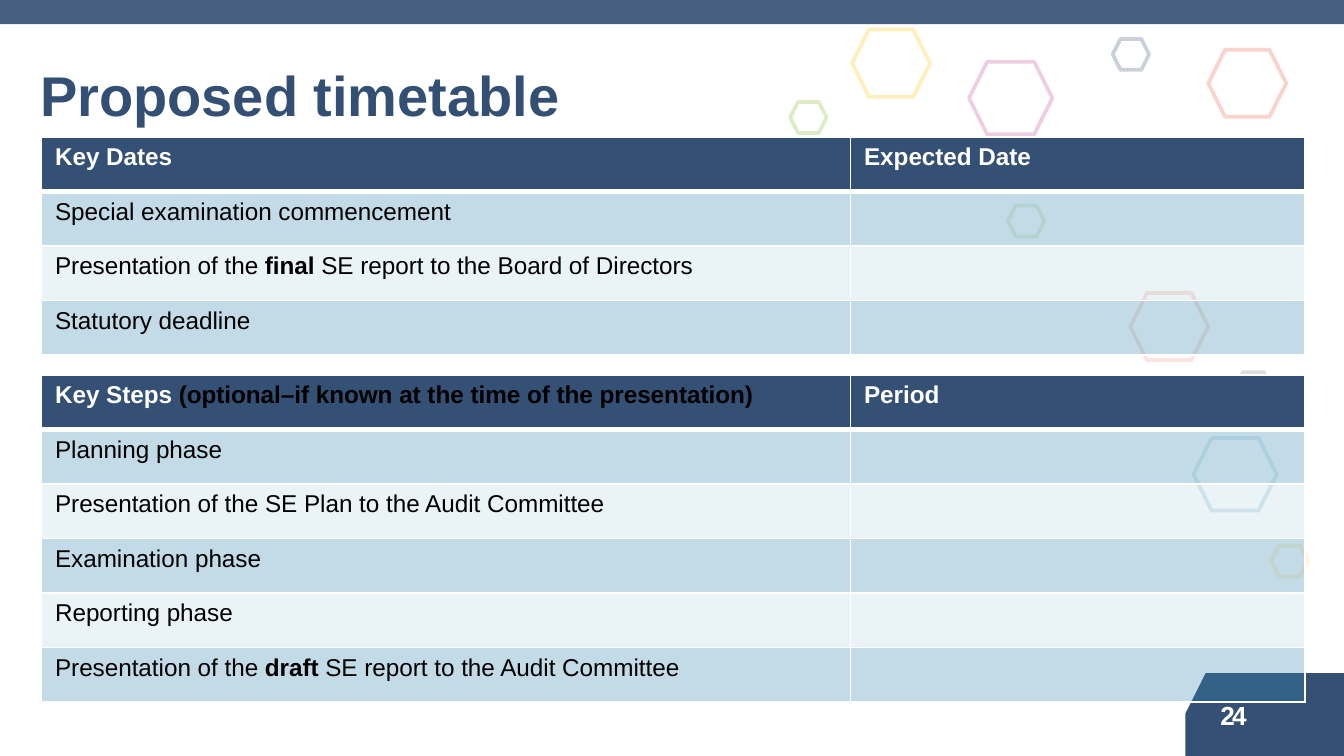
from dataclasses import dataclass

from lxml.etree import SubElement
from pptx import Presentation
from pptx.dml.color import RGBColor
from pptx.enum.shapes import MSO_SHAPE as Shape
from pptx.enum.text import MSO_ANCHOR as Anchor, MSO_AUTO_SIZE as AutoSize, PP_ALIGN as Align
from pptx.oxml import parse_xml
from pptx.oxml.ns import nsdecls, qn
from pptx.util import Inches, Pt


@dataclass(frozen=True)
class Theme:
    font: str = "Arial"
    title: str = "334F74"
    navy: str = "345075"
    blue: str = "368AAF"
    pink: str = "BC4493"
    yellow: str = "FFC400"
    ink: str = "1D2042"
    green: str = "7DB229"
    red: str = "EC563C"
    white: str = "FFFFFF"
    black: str = "000000"
    title_size: int = 30
    number_size: int = 14
    table_size: int = 13


def apply(target, values):
    for name, value in values.items():
        setattr(target, name, value)


def fade(element, percent):
    for color in element.iter(qn("a:srgbClr")):
        SubElement(color, qn("a:alpha")).set("val", str(percent * 1000))


class SlideBuilder:
    COLUMNS, ROWS = 100, 56.25

    def __init__(self, presentation, theme):
        self.theme = theme
        self.column = presentation.slide_width / self.COLUMNS
        self.row = presentation.slide_height / self.ROWS
        self.slide = presentation.slides.add_slide(presentation.slide_layouts[5])
        self.shapes = self.slide.shapes

    def box(self, left, top, width, height):
        return (round(left * self.column), round(top * self.row),
                round(width * self.column), round(height * self.row))

    def add_text(self, paragraph, text, size, color, bold):
        run = paragraph.add_run()
        run.text = text
        apply(run.font, {"name": self.theme.font, "size": Pt(size), "bold": bold})
        run.font.color.rgb = RGBColor.from_string(color)
        return run

    def paint(self, fill, color):
        fill.solid()
        fill.fore_color.rgb = RGBColor.from_string(color)

    def title(self, text):
        shape = self.shapes.title
        apply(shape, dict(zip(("left", "top", "width", "height"), self.box(0, 1.8, 96.5, 10.9))))
        apply(shape.text_frame, {
            "margin_left": Inches(0.3), "margin_right": Inches(0.3),
            "margin_top": Inches(0.05), "margin_bottom": Inches(0.05),
            "vertical_anchor": Anchor.MIDDLE, "word_wrap": True, "auto_size": AutoSize.NONE,
        })
        paragraph = shape.text_frame.paragraphs[0]
        apply(paragraph, {"alignment": Align.LEFT, "line_spacing": Pt(32)})
        self.add_text(paragraph, text, self.theme.title_size, self.theme.title, True)

    def bar(self, height, color, opacity):
        shape = self.shapes.add_shape(Shape.RECTANGLE, *self.box(0, 0, self.COLUMNS, height))
        shape.shadow.inherit = False
        self.paint(shape.fill, color)
        shape.line.fill.background()
        fade(shape._element.spPr, opacity)

    def hexagon(self, left, top, size, color, opacity):
        shape = self.shapes.add_shape(Shape.HEXAGON, *self.box(left, top, *size))
        shape.shadow.inherit = False
        shape.fill.background()
        shape.line.width = Pt(2)
        shape.line.color.rgb = RGBColor.from_string(color)
        fade(shape._element.spPr, opacity)

    def page_tab(self, number):
        outline = [(88.2, 53.1), (89.7, 50.1), (100, 50.1), (100, self.ROWS), (88.2, self.ROWS)]
        points = [(round(x * self.column), round(y * self.row)) for x, y in outline]
        builder = self.shapes.build_freeform(*points[0])
        builder.add_line_segments(points[1:], close=True)
        shape = builder.convert_to_shape()
        shape.shadow.inherit = False
        self.paint(shape.fill, self.theme.navy)
        shape.line.fill.background()
        apply(shape.text_frame, {
            "margin_left": Inches(0.26), "margin_right": 0, "margin_top": 0, "margin_bottom": 0,
            "vertical_anchor": Anchor.MIDDLE, "word_wrap": True,
        })
        paragraph = shape.text_frame.paragraphs[0]
        paragraph.alignment = Align.LEFT
        run = self.add_text(paragraph, number, self.theme.number_size, self.theme.white, True)
        run._r.get_or_add_rPr().set("spc", "-150")

    def borders(self, cell, widths):
        properties = cell._tc.get_or_add_tcPr()
        for position, (side, width) in enumerate(widths.items()):
            properties.insert(position, parse_xml(
                f'<a:ln{side} {nsdecls("a")} w="{Pt(width)}"><a:solidFill>'
                f'<a:srgbClr val="{self.theme.white}"/></a:solidFill></a:ln{side}>'))

    def table(self, top, header, steps):
        theme = self.theme
        rows = [header] + [(step, []) for step in steps]
        frame = self.shapes.add_table(len(rows), 2, *self.box(3.1, top, 94, 4.05 * len(rows)))
        table = frame.table
        apply(table, {"first_row": False, "horz_banding": False})
        for column, width in zip(table.columns, (60.2, 33.8)):
            column.width = round(width * self.column)
        for index, row in enumerate(rows):
            table.rows[index].height = round(4.05 * self.row)
            for cell, runs in zip(table.rows[index].cells, row):
                self.paint(cell.fill, theme.blue if index else theme.navy)
                if index:
                    fade(cell._tc.get_or_add_tcPr(), 30 if index % 2 else 10)
                self.borders(cell, {"L": 1, "R": 1, "T": 3 if index == 1 else 1,
                                    "B": 1 if index else 3})
                for text, color, bold in runs:
                    self.add_text(cell.text_frame.paragraphs[0], text, theme.table_size, color, bold)


def main():
    presentation = Presentation()
    apply(presentation, {"slide_width": Inches(10), "slide_height": Inches(5.625)})
    theme = Theme()
    builder = SlideBuilder(presentation, theme)

    large, medium, small = (6.2, 5.4), (5.8, 5), (2.7, 2.3)
    hexagons = {
        25: [(72.1, 4.6, large, theme.pink), (63.4, 2.2, medium, theme.yellow),
             (58.8, 7.6, small, theme.green), (82.8, 2.9, small, theme.navy),
             (89.9, 3.7, medium, theme.red)],
        15: [(88.8, 32.6, large, theme.blue), (91.9, 27.7, small, theme.ink),
             (75, 15.3, small, theme.green), (84.1, 21.8, medium, theme.red),
             (94.6, 40.6, small, theme.yellow)],
    }

    def heading(text):
        return [(text, theme.white, True)]

    def step(text, strong="", rest=""):
        parts = [(text, False), (strong, True), (rest, False)]
        return [(part, theme.black, bold) for part, bold in parts if part]

    builder.bar(1.8, theme.title, 90)
    for opacity, group in hexagons.items():
        for hexagon in group:
            builder.hexagon(*hexagon, opacity)
    builder.page_tab("24")
    builder.title("Proposed timetable")
    optional = ("(optional–if known at the time of the presentation)", theme.black, True)
    builder.table(27.9, (heading("Key Steps ") + [optional], heading("Period")), [
        step("Planning phase"),
        step("Presentation of the SE Plan to the Audit Committee"),
        step("Examination phase"),
        step("Reporting phase"),
        step("Presentation of the ", "draft", " SE report to the Audit Committee"),
    ])
    builder.table(10.2, (heading("Key Dates"), heading("Expected Date")), [
        step("Special examination commencement"),
        step("Presentation of the ", "final", " SE report to the Board of Directors"),
        step("Statutory deadline"),
    ])
    presentation.save("out.pptx")


if __name__ == "__main__":
    main()
